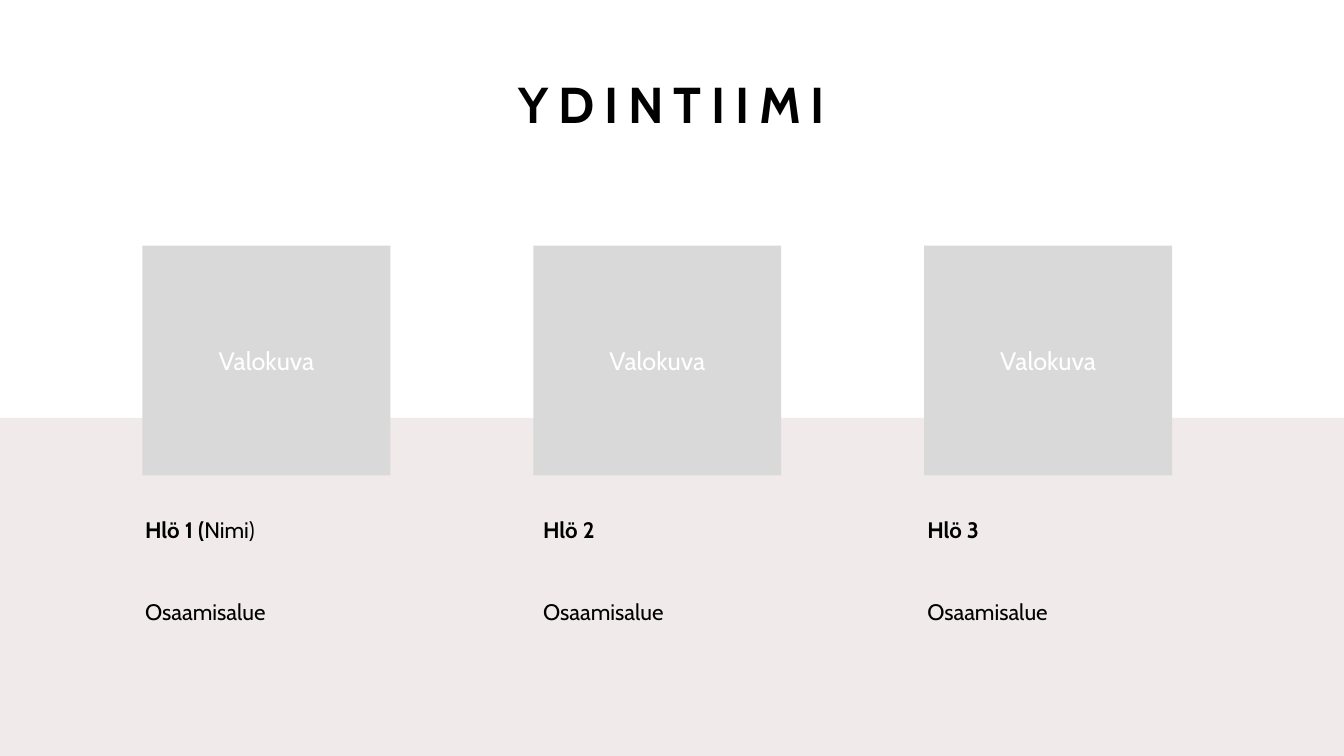
from pptx import Presentation
from pptx.dml.color import RGBColor
from pptx.enum.shapes import MSO_SHAPE
from pptx.enum.text import MSO_ANCHOR, PP_ALIGN
from pptx.oxml.ns import qn
from pptx.util import Cm, Pt
from lxml import etree

RECT = MSO_SHAPE.RECTANGLE
TOP, MID = MSO_ANCHOR.TOP, MSO_ANCHOR.MIDDLE
LEFT, CENTER = PP_ALIGN.LEFT, PP_ALIGN.CENTER


def paint(code):
    return RGBColor.from_string(code)


def write(para, text, font="Cabin", size=16, color="000000", bold=False, track=0):
    run = para.add_run()
    run.text = text
    run.font.name = font
    run.font.size = Pt(size)
    run.font.bold = bold
    run.font.color.rgb = paint(color)
    if track:
        run.font._element.set("spc", str(track * 100))


class Page:
    band = "DBCACD"
    photo = "D9D9D9"
    white = "FFFFFF"

    def __init__(self, slide):
        self.slide = slide
        fill = slide.background.fill
        fill.solid()
        fill.fore_color.rgb = paint(self.white)

    def block(self, x, y, w, h, color, alpha=100):
        shape = self.slide.shapes.add_shape(RECT, Cm(x), Cm(y), Cm(w), Cm(h))
        shape.shadow.inherit = False
        shape.line.fill.background()
        shape.fill.solid()
        shape.fill.fore_color.rgb = paint(color)
        if alpha < 100:
            tone = shape._element.spPr.find(qn("a:solidFill"))[0]
            etree.SubElement(tone, qn("a:alpha"), val=str(alpha * 1000))

    def label(self, x, y, w, h, paras, align=LEFT, anchor=TOP, inset=0.13,
              lead=None, gaps=(0,)):
        """Each paragraph is a list of (text, format) pairs."""
        frame = self.slide.shapes.add_textbox(Cm(x), Cm(y), Cm(w), Cm(h)).text_frame
        frame.word_wrap = True
        frame.vertical_anchor = anchor
        frame.margin_left = frame.margin_right = Cm(inset)
        frame.margin_top = frame.margin_bottom = Cm(inset)
        for i, (runs, gap) in enumerate(zip(paras, gaps)):
            para = frame.add_paragraph() if i else frame.paragraphs[0]
            para.alignment = align
            para.space_before = Pt(gap)
            para.line_spacing = lead
            for text, style in runs:
                write(para, text, **style)


def main():
    deck = Presentation()
    deck.slide_width, deck.slide_height = Cm(33.87), Cm(19.05)
    page = Page(deck.slides.add_slide(deck.slide_layouts[6]))

    # Lower band and title
    page.block(0, 10.53, 33.87, 8.52, page.band, alpha=39)
    title = ("YDINTIIMI", dict(size=36, bold=True, track=7))
    page.label(12.14, 1.85, 9.58, 2.79, [[title]], align=CENTER, inset=0)

    # Team: photo space, name and field of skill
    bold = dict(bold=True)
    team = [
        (3.53, [("Hlö 1 (", bold), ("Nimi)", {})]),
        (13.56, [("Hlö 2", bold)]),
        (23.24, [("Hlö 3", bold)]),
    ]
    for i, (left, name) in enumerate(team):
        x = 3.59 + i * 9.85
        page.block(x, 6.19, 6.25, 5.79, page.photo)
        photo = ("Valokuva", dict(size=18, color=page.white))
        page.label(x + 0.13, 8.56, 5.99, 1.04, [[photo]], align=CENTER, anchor=MID)
        page.label(left, 12.85, 7.47, 5.79, [name, [("Osaamisalue", {})]],
                   lead=1.05, gaps=(9, 38))

    deck.save("out.pptx")


if __name__ == "__main__":
    main()
